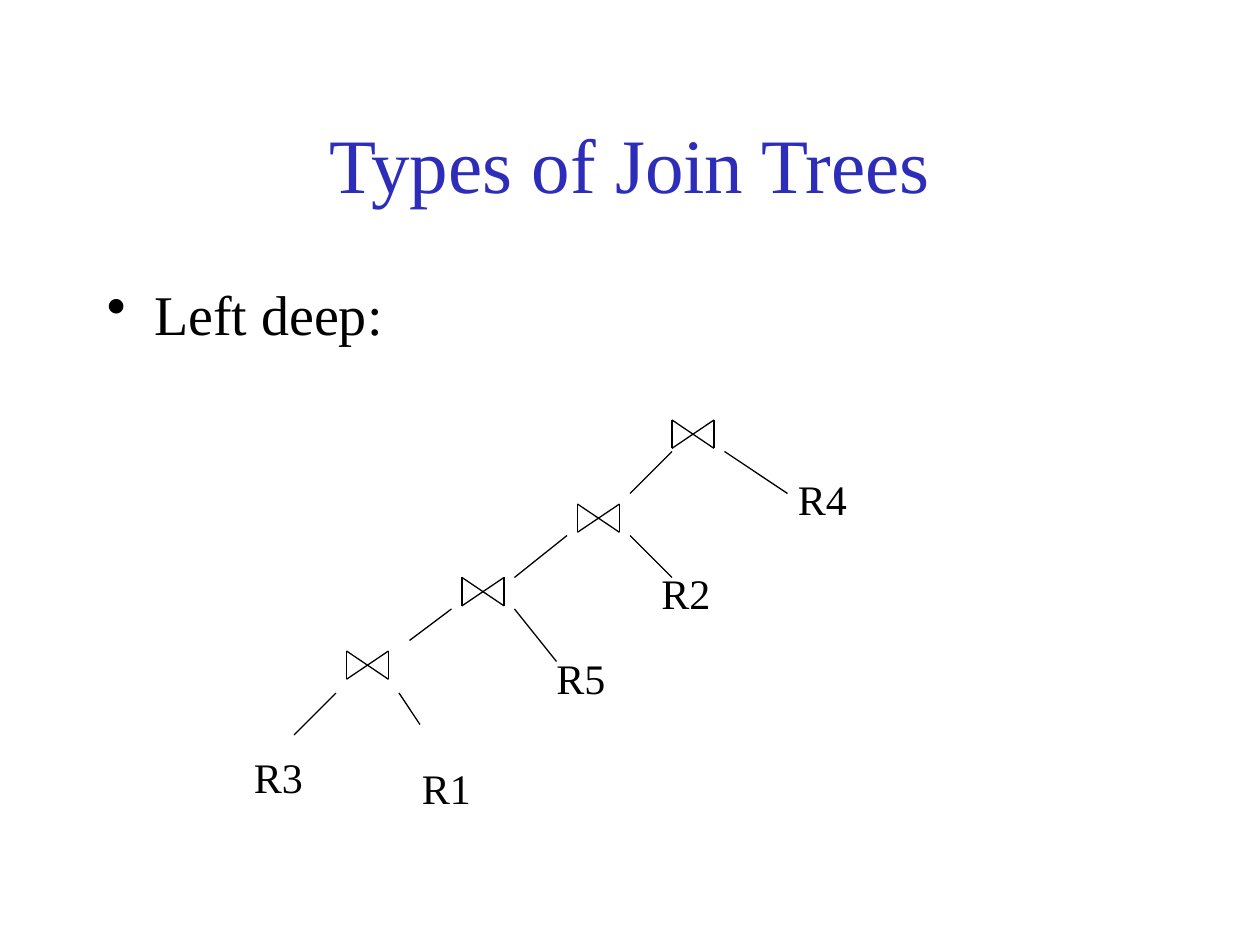
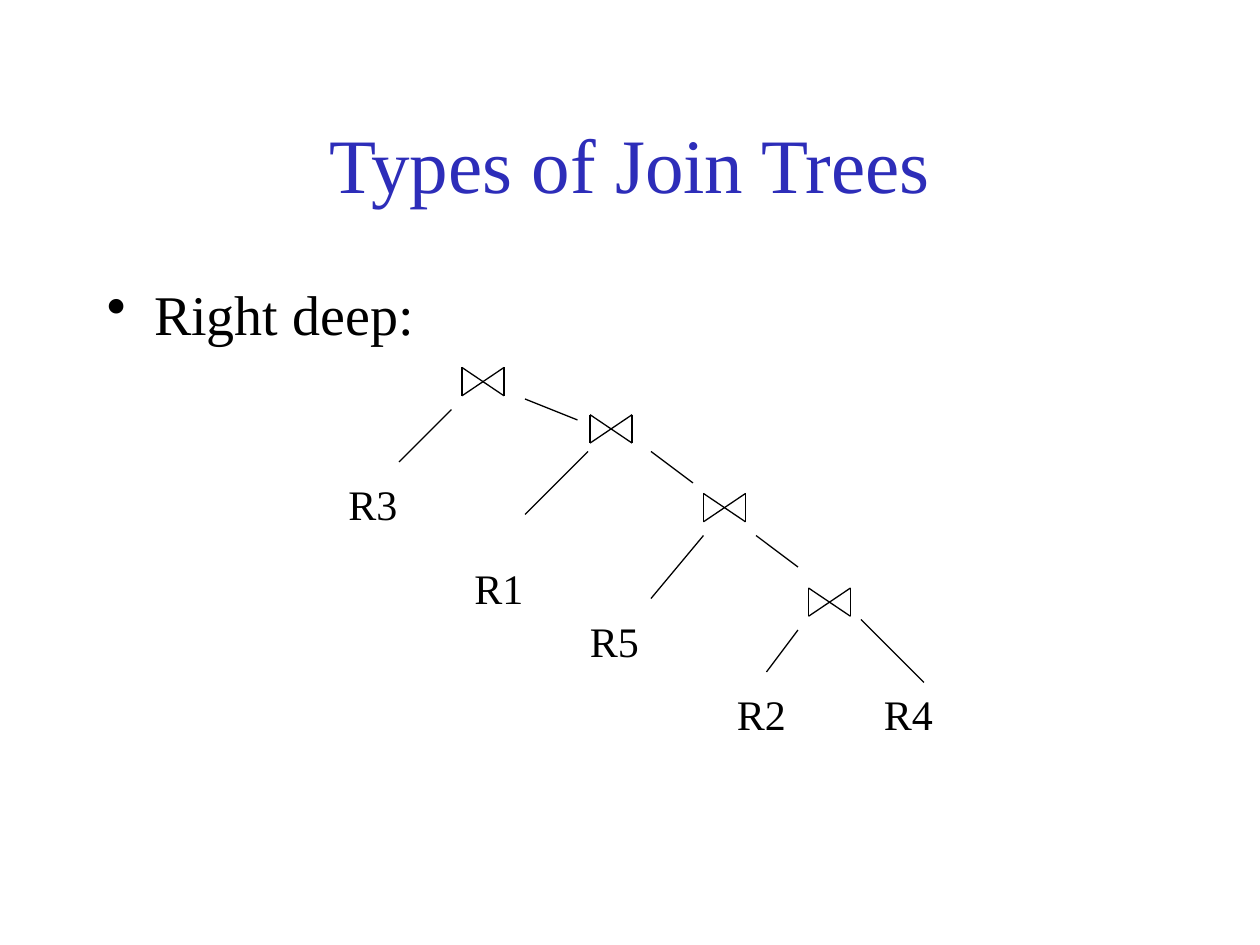
from pptx import Presentation
from pptx.dml.color import RGBColor as Rgb
from pptx.enum.shapes import MSO_CONNECTOR as Conn
from pptx.enum.text import MSO_ANCHOR as Anchor, PP_ALIGN as Align
from pptx.oxml.ns import qn
from pptx.util import Pt
from lxml.etree import SubElement as Sub

PX = 7620
FONT = "Times New Roman"
HUES = {"title": "2D2DB9", "ink": "000000"}
TITLE = (90, 80, 1020, 150)
BODY = (90, 260, 1020, 540)
JOIN_W, JOIN_H = 40, 27
TREES = [
    {
        "head": "Left deep:",
        "at": (230, 400),
        "joins": [
            ((410, 0), (0, 30, -40, 70), (50, 30, 110, 70)),
            ((320, 80), (-10, 30, -60, 70), (50, 30, 90, 70)),
            ((210, 150), (-10, 30, -50, 60), (50, 30, 90, 80)),
            ((100, 220), (-10, 40, -50, 80), (50, 40, 70, 70)),
        ],
        "leaves": {"R3": (0, 310), "R1": (160, 320), "R5": (288, 216),
                   "R2": (388, 135), "R4": (518, 45)},
    },
    {
        "head": "Right deep:",
        "at": (320, 350),
        "joins": [
            ((120, 0), (-10, 40, -60, 90), (60, 30, 110, 50)),
            ((242, 45), (-2, 35, -62, 95), (58, 35, 98, 65)),
            ((350, 120), (0, 40, -50, 100), (50, 40, 90, 70)),
            ((450, 210), (-10, 40, -40, 80), (50, 30, 110, 90)),
        ],
        "leaves": {"R3": (0, 100), "R1": (120, 180), "R5": (230, 230),
                   "R2": (370, 300), "R4": (510, 300)},
    },
]


def add_text(slide, box, text, size, hue="ink", wrap=True):
    """Add a one-paragraph text box and return its frame."""
    frame = slide.shapes.add_textbox(*(n * PX for n in box)).text_frame
    frame.word_wrap = wrap
    frame.text = text
    font = frame.paragraphs[0].font
    font.name, font.size = FONT, Pt(size)
    font.color.rgb = Rgb.from_string(HUES[hue])
    return frame


def add_line(shapes, x, y, ends):
    """Draw a thin line whose ends are offsets from x, y."""
    x1, y1, x2, y2 = ends
    points = (x + x1, y + y1, x + x2, y + y2)
    line = shapes.add_connector(Conn.STRAIGHT, *(n * PX for n in points))
    line.line.color.rgb = Rgb.from_string(HUES["ink"])
    line.line.width = Pt(0.75)
    Sub(line._element.spPr, qn("a:effectLst"))


def add_title(slide, box):
    """Add the shared title, centred in its box."""
    frame = add_text(slide, box, "Types of Join Trees", 44, "title")
    frame.vertical_anchor = Anchor.MIDDLE
    frame.paragraphs[0].alignment = Align.CENTER


def add_body(slide, box, head):
    """Add the bulleted heading of a tree."""
    frame = add_text(slide, box, "", 32)
    para = frame.paragraphs[0]
    props = para._p.get_or_add_pPr()
    props.set("marL", str(45 * PX))
    props.set("indent", str(-45 * PX))
    mark = props.makeelement(qn("a:buChar"), {"char": "•"})
    props.insert(0, mark)
    para.text = head


def add_join(slide, x, y):
    """Draw the bow tie of a join with its top left at x, y."""
    shapes = slide.shapes.add_group_shape().shapes
    w, h = JOIN_W, JOIN_H
    for ends in ((0, 0, w, h), (0, 0, 0, h), (w, h, w, 0), (w, 0, 0, h)):
        add_line(shapes, x, y, ends)


def add_tree(slide, at, joins, leaves):
    """Draw a join tree with its top left corner at the given point."""
    left, top = at
    for (x, y), *arms in joins:
        add_join(slide, left + x, top + y)
        for ends in arms:
            add_line(slide.shapes, left + x, top + y, ends)
    for name, (x, y) in leaves.items():
        add_text(slide, (left + x, top + y, 71, 60), name, 24, wrap=False)


def main():
    """Build one slide for each tree and save the deck."""
    deck = Presentation()
    deck.slide_width, deck.slide_height = 1200 * PX, 900 * PX
    for tree in TREES:
        slide = deck.slides.add_slide(deck.slide_layouts[6])
        add_title(slide, TITLE)
        add_body(slide, BODY, tree["head"])
        add_tree(slide, tree["at"], tree["joins"], tree["leaves"])
    deck.save("out.pptx")


if __name__ == "__main__":
    main()
